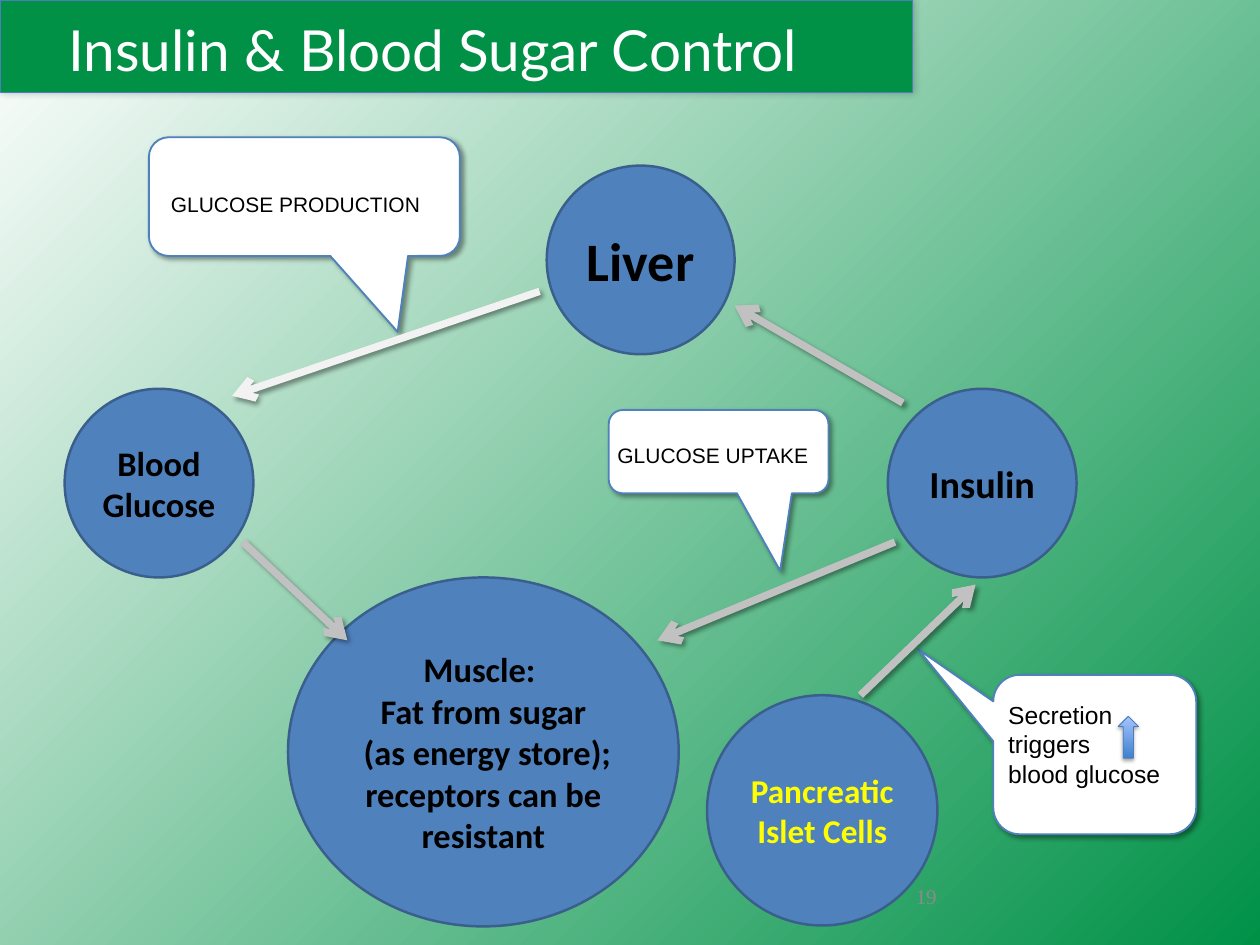
"""Build the slide on insulin and blood sugar control."""
import pptx
import pptx.util
import pptx.dml.color
import pptx.enum.shapes
import pptx.enum.text
import pptx.oxml.ns
import lxml.etree

Inches = pptx.util.Inches
SHAPES = pptx.enum.shapes.MSO_SHAPE
ALIGN = pptx.enum.text.PP_ALIGN
ANCHOR = pptx.enum.text.MSO_ANCHOR
qn = pptx.oxml.ns.qn

COLORS = {
    "green": "009147", "white": "FFFFFF", "black": "000000", "yellow": "FFFF00",
    "circle": "4F81BD", "circle edge": "3A5F8C", "callout edge": "4F81BD",
    "thin edge": "4B7EBC", "pale arrow": "F2F2F2", "grey arrow": "C1C1C1",
    "arrow bottom": "3F80CE", "arrow top": "A4C4FF", "number": "8B8B8B",
}

TITLE = "Insulin & Blood Sugar Control"
BAR_BOX = (0, 0, 10.3, 1.04)
TITLE_BOX = (0.67, 0.12, 9.43, 0.88)

CIRCLES = [
    ((6.17, 1.87, 2.12, 2.13), ["Liver"], 44, "black"),
    ((0.73, 4.39, 2.13, 2.13), ["Blood Glucose"], 28, "black"),
    ((10.02, 4.39, 2.13, 2.13), ["Insulin"], 31, "black"),
    ((3.25, 6.52, 4.41, 3.94),
     ["Muscle: ", "Fat from sugar", " (as energy store); receptors can be resistant"], 28, "black"),
    ((7.98, 7.85, 2.6, 2.6), ["Pancreatic Islet Cells"], 27, "yellow"),
]

CALLOUTS = [
    ((1.68, 1.55, 3.51, 1.34), (0.3, 1.14), (1.83, 2.11, 3.23, 0.39), ["GLUCOSE PRODUCTION"], 17),
    ((6.87, 4.63, 2.48, 0.94), (0.28, 1.43), (6.87, 4.95, 2.44, 0.39), ["GLUCOSE UPTAKE"], 17),
    ((11.21, 7.62, 2.29, 1.8), (-0.87, -0.66), (11.28, 7.85, 2.27, 1.11),
     ["Secretion triggers", "blood glucose"], 20),
]

ARROWS = [
    ((6.09, 3.29), (2.62, 4.47), "pale arrow"),
    ((10.19, 4.55), (8.29, 3.45), "grey arrow"),
    ((2.74, 6.12), (3.92, 7.23), "grey arrow"),
    ((10.1, 6.12), (7.42, 7.23), "grey arrow"),
    ((9.71, 7.85), (11.01, 6.6), "grey arrow"),
]

UP_ARROW_BOX = (12.62, 8.09, 0.23, 0.47)
PAGE_NUMBER = "19"
PAGE_NUMBER_BOX = (9.67, 9.93, 1, 0.38)


def rgb(name):
    return pptx.dml.color.RGBColor.from_string(COLORS[name])


def add_shadow(shape, opacity, blur, distance, angle):
    properties = shape._element.spPr
    for old in properties.findall(qn("a:effectLst")):
        properties.remove(old)
    effects = lxml.etree.SubElement(properties, qn("a:effectLst"))
    shadow = lxml.etree.SubElement(
        effects, qn("a:outerShdw"), blurRad=str(pptx.util.Pt(blur)),
        dist=str(pptx.util.Pt(distance)), dir=str(angle * 60000), algn="ctr", rotWithShape="0")
    color = lxml.etree.SubElement(shadow, qn("a:srgbClr"), val=COLORS["black"])
    lxml.etree.SubElement(color, qn("a:alpha"), val=str(opacity * 1000))


def add_shape(slide, kind, box, fill, edge, width):
    shape = slide.shapes.add_shape(kind, *map(Inches, box))
    shape.shadow.inherit = False
    if fill:
        shape.fill.solid()
        shape.fill.fore_color.rgb = rgb(fill)
    shape.line.color.rgb = rgb(edge)
    shape.line.width = pptx.util.Pt(width)
    return shape


def write(paragraph, lines, font, size, color, align=ALIGN.LEFT, bold=False):
    paragraph.alignment = align
    for index, line in enumerate(lines):
        if index:
            paragraph.add_line_break()
        run = paragraph.add_run()
        run.text = line
        run.font.name = font
        run.font.size = pptx.util.Pt(size)
        run.font.bold = bold
        run.font.color.rgb = rgb(color)


def add_text(slide, box, paragraphs, font, size, color, align=ALIGN.LEFT):
    frame = slide.shapes.add_textbox(*map(Inches, box)).text_frame
    frame.word_wrap = True
    for index, text in enumerate(paragraphs):
        paragraph = frame.add_paragraph() if index else frame.paragraphs[0]
        write(paragraph, [text], font, size, color, align)


def set_background(slide):
    fill = slide.background.fill
    fill.gradient()
    for stop, position, color in zip(fill.gradient_stops, (0, 1), ("white", "green")):
        stop.position = position
        stop.color.rgb = rgb(color)
    gradient = slide._element.find(".//" + qn("a:gradFill"))
    first_color = gradient.find(".//" + qn("a:srgbClr"))
    lxml.etree.SubElement(first_color, qn("a:alpha"), val="39000")
    radial = lxml.etree.Element(qn("a:path"), {"path": "circle"})
    lxml.etree.SubElement(radial, qn("a:fillToRect"), r="100000", b="100000")
    gradient.replace(gradient.find(qn("a:lin")), radial)


def add_title(slide):
    bar = add_shape(slide, SHAPES.RECTANGLE, BAR_BOX, "green", "thin edge", 0.75)
    add_shadow(bar, 20, 6, 0, 315)
    title = slide.shapes.title
    title.left, title.top, title.width, title.height = map(Inches, TITLE_BOX)
    title.text_frame.word_wrap = True
    title.text_frame.vertical_anchor = ANCHOR.TOP
    write(title.text_frame.paragraphs[0], [TITLE], "Lato", 46, "white")
    bar._element.addnext(title._element)


def add_arrow(slide, start, end, color):
    arrow = slide.shapes.add_connector(
        pptx.enum.shapes.MSO_CONNECTOR.STRAIGHT, *map(Inches, start + end))
    arrow.line.color.rgb = rgb(color)
    arrow.line.width = pptx.util.Pt(6)
    lxml.etree.SubElement(arrow.line._get_or_add_ln(), qn("a:tailEnd"), type="arrow")
    add_shadow(arrow, 40, 4, 3, 45)


def main():
    presentation = pptx.Presentation()
    presentation.slide_width = Inches(14.22)
    presentation.slide_height = Inches(10.67)
    slide = presentation.slides.add_slide(presentation.slide_layouts[5])
    set_background(slide)
    add_title(slide)

    for box, tip, text_box, paragraphs, size in CALLOUTS:
        callout = add_shape(
            slide, SHAPES.ROUNDED_RECTANGULAR_CALLOUT, box, "white", "callout edge", 1.5)
        callout.adjustments[0], callout.adjustments[1] = tip
        add_shadow(callout, 40, 4, 3, 45)
        add_text(slide, text_box, paragraphs, "Arial", size, "black")

    for box, lines, size, color in CIRCLES:
        circle = add_shape(slide, SHAPES.OVAL, box, "circle", "circle edge", 2)
        circle.text_frame.word_wrap = True
        circle.text_frame.vertical_anchor = ANCHOR.MIDDLE
        write(circle.text_frame.paragraphs[0], lines, "Calibri", size, color, ALIGN.CENTER, True)

    for start, end, color in ARROWS:
        add_arrow(slide, start, end, color)

    up_arrow = add_shape(slide, SHAPES.UP_ARROW, UP_ARROW_BOX, None, "thin edge", 0.75)
    up_arrow.fill.gradient()
    up_arrow.fill.gradient_angle = 90
    for stop, position, color in zip(
            up_arrow.fill.gradient_stops, (0, 1), ("arrow bottom", "arrow top")):
        stop.position = position
        stop.color.rgb = rgb(color)
    add_shadow(up_arrow, 35, 3.1, 1.8, 90)

    add_text(slide, PAGE_NUMBER_BOX, [PAGE_NUMBER], "Times New Roman", 17, "number", ALIGN.RIGHT)
    presentation.save("out.pptx")


if __name__ == "__main__":
    main()
